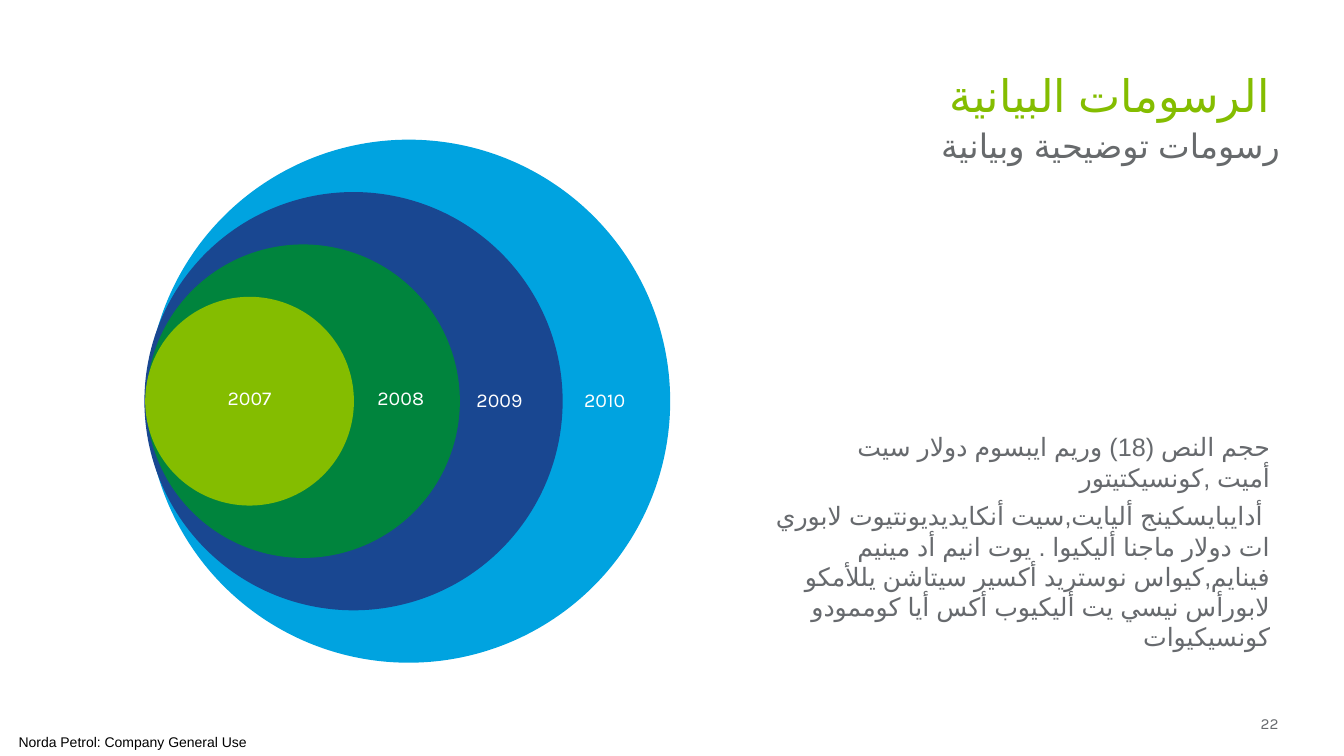
from lxml.etree import SubElement
from pptx import Presentation
from pptx.dml.color import RGBColor
from pptx.enum.lang import MSO_LANGUAGE_ID as Lang
from pptx.enum.shapes import MSO_SHAPE as Shape
from pptx.enum.text import MSO_ANCHOR as Anchor, PP_ALIGN as Align
from pptx.oxml.ns import qn
from pptx.util import Cm, Pt

SKY = RGBColor(0x00, 0xA3, 0xE0)
BLUE = RGBColor(0x19, 0x47, 0x91)
GREEN = RGBColor(0x00, 0x84, 0x3D)
LIME = RGBColor(0x84, 0xBD, 0x00)
GRAY = RGBColor(0x67, 0x6A, 0x6E)
SLATE = RGBColor(0x67, 0x6A, 0x6C)
WHITE = RGBColor(0xFF, 0xFF, 0xFF)
BLACK = RGBColor(0x00, 0x00, 0x00)

MID = 10.11
WIDE = 13.18
STEP = 2.64

YEARS = [
    ("2010", SKY, 3.71, 15.24, 10.07),
    ("2009", BLUE, 3.64, 12.59, 10.07),
    ("2008", GREEN, 3.69, 10.1, 10.03),
    ("2007", LIME, 3.66, 6.29, 10.03),
]

BODY = [
    "حجم النص (18) وريم ايبسوم دولار سيت أميت ,كونسيكتيتور",
    " أدايبايسكينج أليايت,سيت أنكايديديونتيوت لابوري ات دولار ماجنا أليكيوا . "
    "يوت انيم أد مينيم فينايم,كيواس نوستريد أكسير سيتاشن يللأمكو لابورأس نيسي "
    "يت أليكيوب أكس أيا كوممودو كونسيكيوات",
]


def add_text(slide, box, lines, size, color, font="Arial", align=Align.RIGHT,
             anchor=Anchor.TOP, side=0.0, edge=0.13, rtl=False):
    frame = slide.shapes.add_textbox(*map(Cm, box)).text_frame
    frame.word_wrap = True
    frame.vertical_anchor = anchor
    frame.margin_left = frame.margin_right = Cm(side)
    frame.margin_top = frame.margin_bottom = Cm(edge)
    frame.text = "\n".join(lines)
    for i, para in enumerate(frame.paragraphs):
        para.alignment = align
        if i:
            para.space_before = Pt(6)
        if rtl:
            para._p.get_or_add_pPr().set("rtl", "1")
        for run in para.runs:
            run.font.size = Pt(size)
            run.font.name = font
            run.font.color.rgb = color
            if rtl:
                run.font.language_id = Lang.ARABIC
                SubElement(run._r.get_or_add_rPr(), qn("a:cs")).set("typeface", font)


def add_disc(slide, left, size, color):
    disc = slide.shapes.add_shape(
        Shape.OVAL, Cm(left), Cm(MID - size / 2), Cm(size), Cm(size))
    disc.shadow.inherit = False
    disc.fill.solid()
    disc.fill.fore_color.rgb = color
    disc.line.fill.background()


def add_year(slide, year, x, y):
    add_text(slide, (x - 1, y - 0.5, 2, 1), [year], 14, WHITE, "Karla",
             Align.CENTER, Anchor.MIDDLE)


def main():
    deck = Presentation()
    deck.slide_width = Cm(33.87)
    deck.slide_height = Cm(19.05)
    slide = deck.slides.add_slide(deck.slide_layouts[6])

    for i, (year, color, left, x, y) in enumerate(YEARS):
        add_disc(slide, left, WIDE - i * STEP, color)
        add_year(slide, year, x, y)

    add_text(slide, (19, 10.75, 13.26, 5.25), BODY, 18, GRAY, side=0.25, rtl=True)
    add_text(slide, (19.69, 1.57, 12.57, 1.45), ["الرسومات البيانية"], 32, LIME,
             side=0.25, rtl=True)
    add_text(slide, (19.69, 3.02, 12.57, 1.45), ["رسومات توضيحية وبيانية"], 24,
             SLATE, rtl=True)
    add_text(slide, (30.97, 17.91, 1.25, 0.64), ["22"], 11, GRAY, "Karla",
             anchor=Anchor.MIDDLE)
    add_text(slide, (0.47, 18.35, 6.5, 0.7), ["Norda Petrol: Company General Use"],
             10, BLACK, align=Align.LEFT, anchor=Anchor.MIDDLE, edge=0)
    deck.save("out.pptx")


if __name__ == "__main__":
    main()
